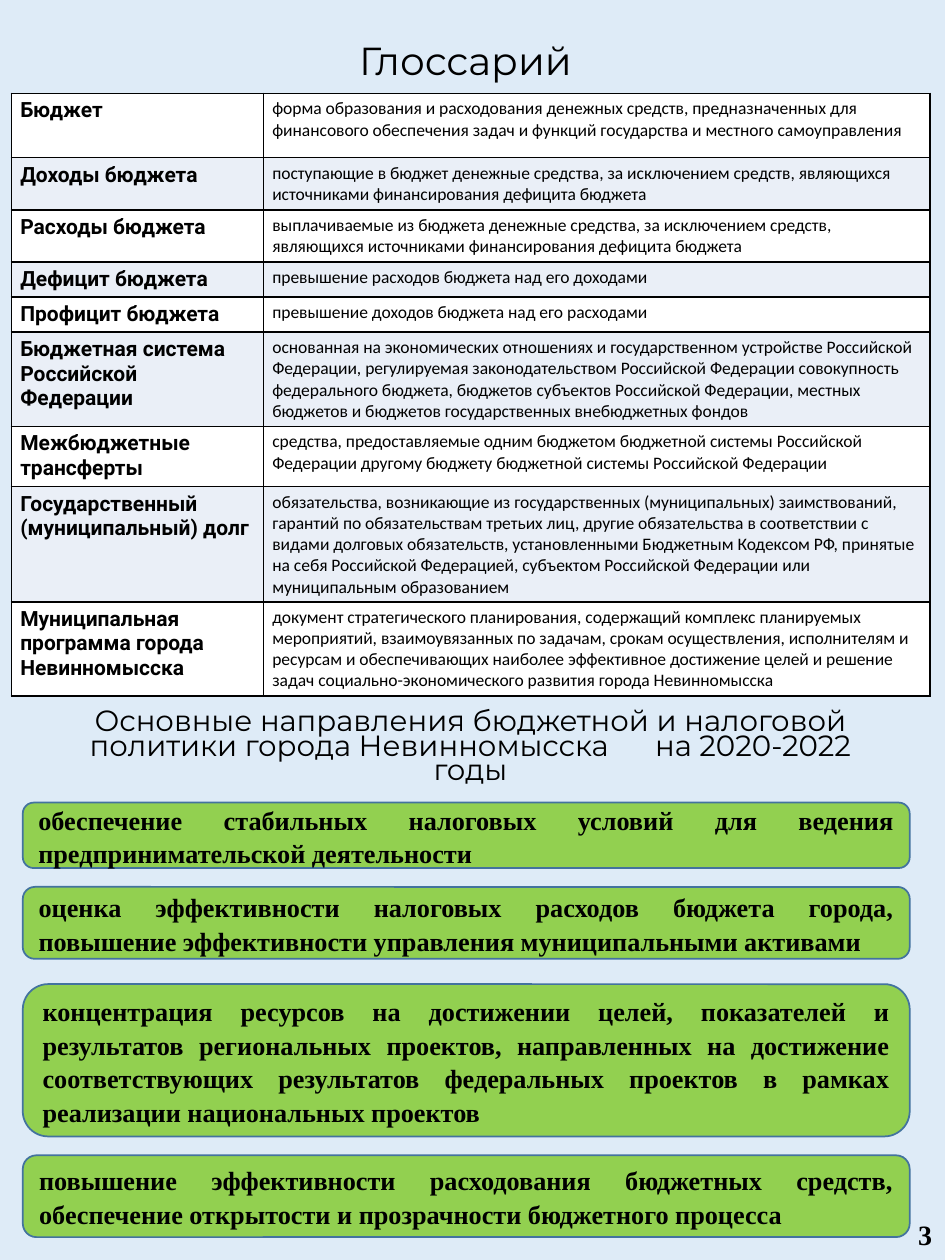
from lxml.etree import SubElement
from pptx import Presentation
from pptx.dml.color import RGBColor
from pptx.enum.shapes import MSO_SHAPE
from pptx.enum.text import MSO_ANCHOR, PP_ALIGN
from pptx.oxml.ns import qn
from pptx.util import Cm, Pt

BLACK = RGBColor(0x00, 0x00, 0x00)
WHITE = RGBColor(0xFF, 0xFF, 0xFF)
SKY = RGBColor(0xDE, 0xEB, 0xF7)
BAND = RGBColor(0xEA, 0xEF, 0xF7)
GREEN = RGBColor(0x92, 0xD0, 0x50)
STEEL = RGBColor(0x43, 0x73, 0x9E)

GLOSSARY = [
    (1.3, "Бюджет", "форма образования и расходования денежных средств, предназначенных для финансового обеспечения задач и функций государства и местного самоуправления"),
    (1.02, "Доходы бюджета", "поступающие в бюджет денежные средства, за исключением средств, являющихся источниками финансирования дефицита бюджета"),
    (1.02, "Расходы бюджета", "выплачиваемые из бюджета денежные средства, за исключением средств, являющихся источниками финансирования дефицита бюджета"),
    (0.7, "Дефицит бюджета", "превышение расходов бюджета над его доходами"),
    (0.7, "Профицит бюджета", "превышение доходов бюджета над его расходами"),
    (1.83, "Бюджетная система Российской Федерации", "основанная на экономических отношениях и государственном устройстве Российской Федерации, регулируемая законодательством Российской Федерации совокупность федерального бюджета, бюджетов субъектов Российской Федерации, местных бюджетов и бюджетов государственных внебюджетных фондов"),
    (1.2, "Межбюджетные трансферты", "средства, предоставляемые одним бюджетом бюджетной системы Российской Федерации другому бюджету бюджетной системы Российской Федерации"),
    (1.83, "Государственный (муниципальный) долг", "обязательства, возникающие из государственных (муниципальных) заимствований, гарантий по обязательствам третьих лиц, другие обязательства в соответствии с видами долговых обязательств, установленными Бюджетным Кодексом РФ, принятые на себя Российской Федерацией, субъектом Российской Федерации или муниципальным образованием"),
    (1.83, "Муниципальная программа города Невинномысска", "документ стратегического планирования, содержащий комплекс планируемых мероприятий, взаимоувязанных по задачам, срокам осуществления, исполнителям и ресурсам и обеспечивающих наиболее эффективное достижение целей и решение задач социально-экономического развития города Невинномысска"),
]

POLICIES = [
    (16.18, 1.32, "обеспечение стабильных налоговых условий для ведения предпринимательской деятельности"),
    (17.88, 1.45, "оценка эффективности налоговых расходов бюджета города, повышение эффективности управления муниципальными активами"),
    (19.84, 3.07, "концентрация ресурсов на достижении целей, показателей и результатов региональных проектов, направленных на достижение соответствующих результатов федеральных проектов в рамках реализации национальных проектов"),
    (23.29, 1.65, "повышение эффективности расходования бюджетных средств, обеспечение открытости и прозрачности бюджетного процесса"),
]


class GlossaryPage:
    """Holds the style and the current slide, and draws its elements."""

    heading_font = "Montserrat"
    term_font = "Roboto"
    meaning_font = "Calibri"
    policy_font = "Times New Roman"

    def __init__(self, deck):
        self.page = deck.slides.add_slide(deck.slide_layouts[6])
        self.page.background.fill.solid()
        self.page.background.fill.fore_color.rgb = SKY

    def style(self, para, font, size, bold=False, align=PP_ALIGN.LEFT, spacing=1.0):
        para.alignment = align
        para.line_spacing = spacing
        for span in para.runs:
            span.font.name = font
            span.font.size = Pt(size)
            span.font.bold = bold
            span.font.color.rgb = BLACK

    def text(self, left, top, width, height, parts, font, size, anchor=MSO_ANCHOR.MIDDLE, **look):
        box = self.page.shapes.add_textbox(Cm(left), Cm(top), Cm(width), Cm(height))
        box.text_frame.word_wrap = True
        box.text_frame.vertical_anchor = anchor
        para = box.text_frame.paragraphs[0]
        for part in parts:
            para.add_run().text = part
        self.style(para, font, size, **look)
        return para

    def wide_gap(self, span, points):
        span.font._element.set("spc", str(points * 100))

    def cell(self, cell, text, font, size, bold, colour):
        cell.margin_left = cell.margin_right = Cm(0.18)
        cell.margin_top = cell.margin_bottom = Cm(0.1)
        cell.text_frame.text = text
        self.style(cell.text_frame.paragraphs[0], font, size, bold)
        properties = cell._tc.get_or_add_tcPr()
        for side in ("lnL", "lnR", "lnT", "lnB"):
            border = SubElement(properties, qn(f"a:{side}"), w=str(Pt(1)))
            SubElement(SubElement(border, qn("a:solidFill")), qn("a:srgbClr"), val=str(BLACK))
        cell.fill.solid()
        cell.fill.fore_color.rgb = colour

    def glossary(self, left, top, widths, entries):
        height = sum(entry[0] for entry in entries)
        frame = self.page.shapes.add_table(
            len(entries), len(widths), Cm(left), Cm(top), Cm(sum(widths)), Cm(height))
        table = frame.table
        for column, width in zip(table.columns, widths):
            column.width = Cm(width)
        for index, (row_height, term, meaning) in enumerate(entries):
            table.rows[index].height = Cm(row_height)
            colour = BAND if index % 2 else WHITE
            self.cell(table.cell(index, 0), term, self.term_font, 12, True, colour)
            self.cell(table.cell(index, 1), meaning, self.meaning_font, 10, False, colour)

    def policy(self, top, height, text):
        box = self.page.shapes.add_shape(
            MSO_SHAPE.ROUNDED_RECTANGLE, Cm(0.46), Cm(top), Cm(17.88), Cm(height))
        box.shadow.inherit = False
        box.fill.solid()
        box.fill.fore_color.rgb = GREEN
        box.line.color.rgb = STEEL
        box.line.width = Pt(1)
        box.text_frame.word_wrap = True
        box.text_frame.vertical_anchor = MSO_ANCHOR.MIDDLE
        box.text_frame.text = text
        self.style(box.text_frame.paragraphs[0], self.policy_font, 15, True, PP_ALIGN.JUSTIFY, 1.07)


def main():
    deck = Presentation()
    deck.slide_width, deck.slide_height = Cm(19.05), Cm(25.4)
    page = GlossaryPage(deck)
    page.text(1.17, 0.69, 16.43, 1.14, ["Глоссарий"], page.heading_font, 22.3,
              align=PP_ALIGN.CENTER, spacing=0.9)
    page.glossary(0.23, 1.88, (5.08, 13.44), GLOSSARY)
    subtitle = page.text(
        1.27, 14.2, 16.43, 1.8,
        ["Основные направления бюджетной и налоговой политики города Невинномысска",
         " ", "на 2020-2022 годы"],
        page.heading_font, 16.7, align=PP_ALIGN.CENTER, spacing=0.7)
    page.wide_gap(subtitle.runs[1], 22)
    for top, height, text in POLICIES:
        page.policy(top, height, text)
    page.text(18.26, 24.41, 1.3, 0.94, ["3"], page.policy_font, 16, MSO_ANCHOR.TOP, bold=True)
    deck.save("out.pptx")


if __name__ == "__main__":
    main()
